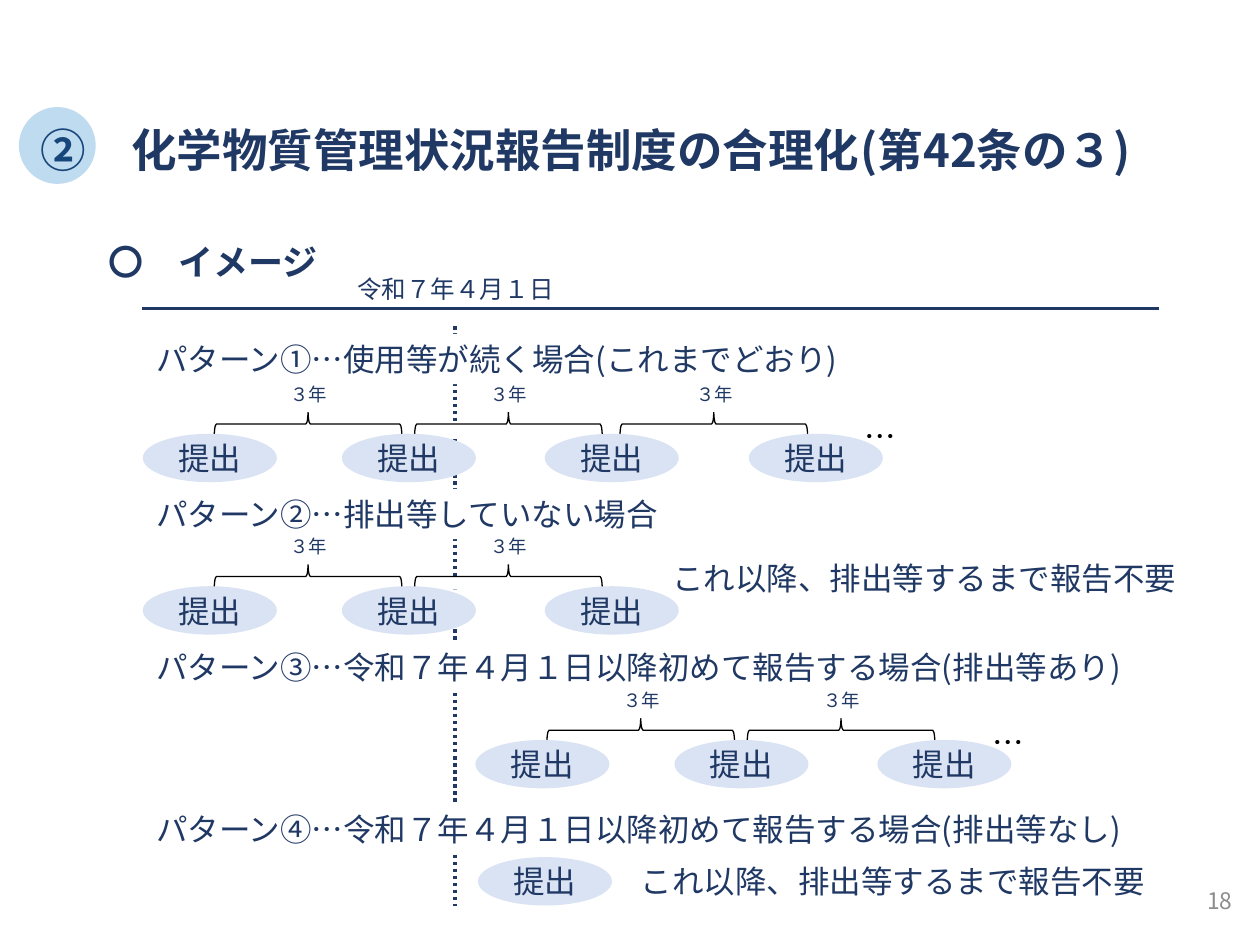
from pptx import Presentation
from pptx.dml.color import RGBColor
from pptx.enum.dml import MSO_LINE
from pptx.enum.shapes import MSO_CONNECTOR, MSO_SHAPE
from pptx.enum.text import MSO_ANCHOR, MSO_AUTO_SIZE, PP_ALIGN
from pptx.oxml.ns import qn
from pptx.util import Inches, Pt
from lxml import etree

STRAIGHT = MSO_CONNECTOR.STRAIGHT
DOTTED = MSO_LINE.ROUND_DOT
RECTANGLE, OVAL, BRACE = MSO_SHAPE.RECTANGLE, MSO_SHAPE.OVAL, MSO_SHAPE.RIGHT_BRACE
TOP, MIDDLE = MSO_ANCHOR.TOP, MSO_ANCHOR.MIDDLE
LEFT, CENTER, RIGHT = PP_ALIGN.LEFT, PP_ALIGN.CENTER, PP_ALIGN.RIGHT
GROW = MSO_AUTO_SIZE.SHAPE_TO_FIT_TEXT

NAVY = RGBColor(0x20, 0x38, 0x64)
BLUE = RGBColor(0x00, 0x70, 0xC0)
PALE_BLUE = RGBColor(0xDA, 0xE3, 0xF3)
GRAY = RGBColor(0x8C, 0x8C, 0x8C)
BLACK = RGBColor(0, 0, 0)
WHITE = RGBColor(0xFF, 0xFF, 0xFF)
JAPANESE_FONT = "Noto Sans CJK JP"

# Timeline measures, relative to the left and top of its first oval
OVAL_OFFSETS = (0, 1.58, 3.19, 4.81)
PERIOD_OFFSETS = (1.0, 2.59, 4.22)
NO_REPORT_TEXT = "これ以降、排出等するまで報告不要"


def write(shape, text, size, color=NAVY, align=LEFT, anchor=TOP, bold=False,
          font_name=JAPANESE_FONT):
    text_frame = shape.text_frame
    text_frame.text = text
    text_frame.word_wrap = True
    text_frame.vertical_anchor = anchor
    paragraph = text_frame.paragraphs[0]
    paragraph.alignment = align
    font = paragraph.runs[0].font
    font.name, font.size, font.bold = font_name, Pt(size), bold
    font.color.rgb = color
    # East Asian typeface follows the Latin one
    east_asian = etree.Element(qn("a:ea"), typeface=JAPANESE_FONT)
    font._element.find(qn("a:latin")).addnext(east_asian)


def add_text(slide, left, top, width, height, text, size, **style):
    box = slide.shapes.add_textbox(Inches(left), Inches(top), Inches(width), Inches(height))
    write(box, text, size, **style)
    box.text_frame.auto_size = GROW
    return box


def add_shape(slide, kind, left, top, width, height, fill, line=None, line_width=1):
    shape = slide.shapes.add_shape(
        kind, Inches(left), Inches(top), Inches(width), Inches(height))
    shape.shadow.inherit = False
    shape.fill.solid()
    shape.fill.fore_color.rgb = fill
    if line is None:
        shape.line.fill.background()
    else:
        shape.line.color.rgb = line
        shape.line.width = Pt(line_width)
    return shape


def add_label(slide, left, top, width, height, text, size, align=LEFT):
    label = add_shape(slide, RECTANGLE, left, top, width, height, WHITE)
    write(label, text, size, align=align)
    label.text_frame.auto_size = GROW


def add_line(slide, left, top, right, bottom, width):
    line = slide.shapes.add_connector(
        STRAIGHT, Inches(left), Inches(top), Inches(right), Inches(bottom))
    line.line.color.rgb = NAVY
    line.line.width = Pt(width)
    etree.SubElement(line._element.spPr, qn("a:effectLst"))
    return line


def add_title(slide, left, top, width):
    add_text(slide, left + 0.07, top + 0.07, width, 0.54,
             "②\u3000化学物質管理状況報告制度の合理化(第42条の３)", 26, bold=True)
    circle = add_shape(slide, OVAL, left, top, 0.61, 0.61, BLUE)
    color = circle.fill._xPr.find(qn("a:solidFill"))[0]
    etree.SubElement(color, qn("a:alpha"), val="25000")


def add_heading(slide, left, top, width):
    add_text(slide, left, top, width, 0.44, "〇\u3000イメージ", 20, bold=True)
    add_line(slide, left + 0.37, top + 0.59, left + 8.44, top + 0.59, 2)


def add_submission(slide, left, top):
    oval = add_shape(slide, OVAL, left, top, 1.05, 0.37, PALE_BLUE, PALE_BLUE)
    write(oval, "提出", 18, align=CENTER, anchor=MIDDLE, font_name="Calibri")
    oval.text_frame.word_wrap = False


def add_timeline(slide, left, top, submissions, continues):
    # Three-year periods between submissions
    for offset in PERIOD_OFFSETS[:submissions - 1]:
        brace = add_shape(slide, BRACE, left + offset + 0.2, top - 0.83, 0.21, 1.49,
                          WHITE, BLACK, 0.75)
        brace.rotation = 270
        add_label(slide, left + offset, top - 0.46, 0.62, 0.28, "３年", 10.5, CENTER)
    for offset in OVAL_OFFSETS[:submissions]:
        add_submission(slide, left + offset, top)
    if continues:
        last = OVAL_OFFSETS[submissions - 1]
        add_text(slide, left + last + 0.76, top - 0.19, 0.55, 0.4, "…", 18,
                 color=BLACK, align=CENTER)


def add_pattern_label(slide, top, width, text):
    add_label(slide, 1.14, top, width, 0.4, text, 18)


def add_no_report_note(slide, left, top):
    add_text(slide, left, top, 4.35, 0.4, NO_REPORT_TEXT, 18, align=CENTER)


def main():
    presentation = Presentation()
    presentation.slide_width, presentation.slide_height = Inches(10), Inches(7.5)
    slide = presentation.slides.add_slide(presentation.slide_layouts[6])

    # Effective date marker, behind everything
    add_line(slide, 3.61, 2.59, 3.61, 7.19, 2).line.dash_style = DOTTED
    add_title(slide, 0.15, 0.85, 9.65)
    add_heading(slide, 0.76, 1.86, 8.72)
    add_text(slide, 2.49, 2.12, 2.25, 0.34, "令和７年４月１日", 14, align=CENTER, anchor=MIDDLE)

    # Pattern 1: use continues
    add_timeline(slide, 1.14, 3.45, 4, True)
    add_pattern_label(slide, 2.65, 5.71, "パターン①…使用等が続く場合(これまでどおり)")

    # Pattern 2: no emissions
    add_pattern_label(slide, 3.88, 4.49, "パターン②…排出等していない場合")
    add_timeline(slide, 1.14, 4.66, 3, False)
    add_no_report_note(slide, 5.16, 4.39)

    # Pattern 3: first report, with emissions
    add_pattern_label(slide, 5.09, 7.92,
                      "パターン③…令和７年４月１日以降初めて報告する場合(排出等あり)")
    add_timeline(slide, 3.78, 5.88, 3, True)

    # Pattern 4: first report, without emissions
    add_pattern_label(slide, 6.38, 8.07,
                      "パターン④…令和７年４月１日以降初めて報告する場合(排出等なし)")
    add_submission(slide, 3.8, 6.81)
    add_no_report_note(slide, 4.91, 6.79)

    # Page number
    add_text(slide, 7.63, 6.95, 2.25, 0.4, "18", 13, color=GRAY, align=RIGHT, anchor=MIDDLE)
    presentation.save("out.pptx")


if __name__ == "__main__":
    main()
